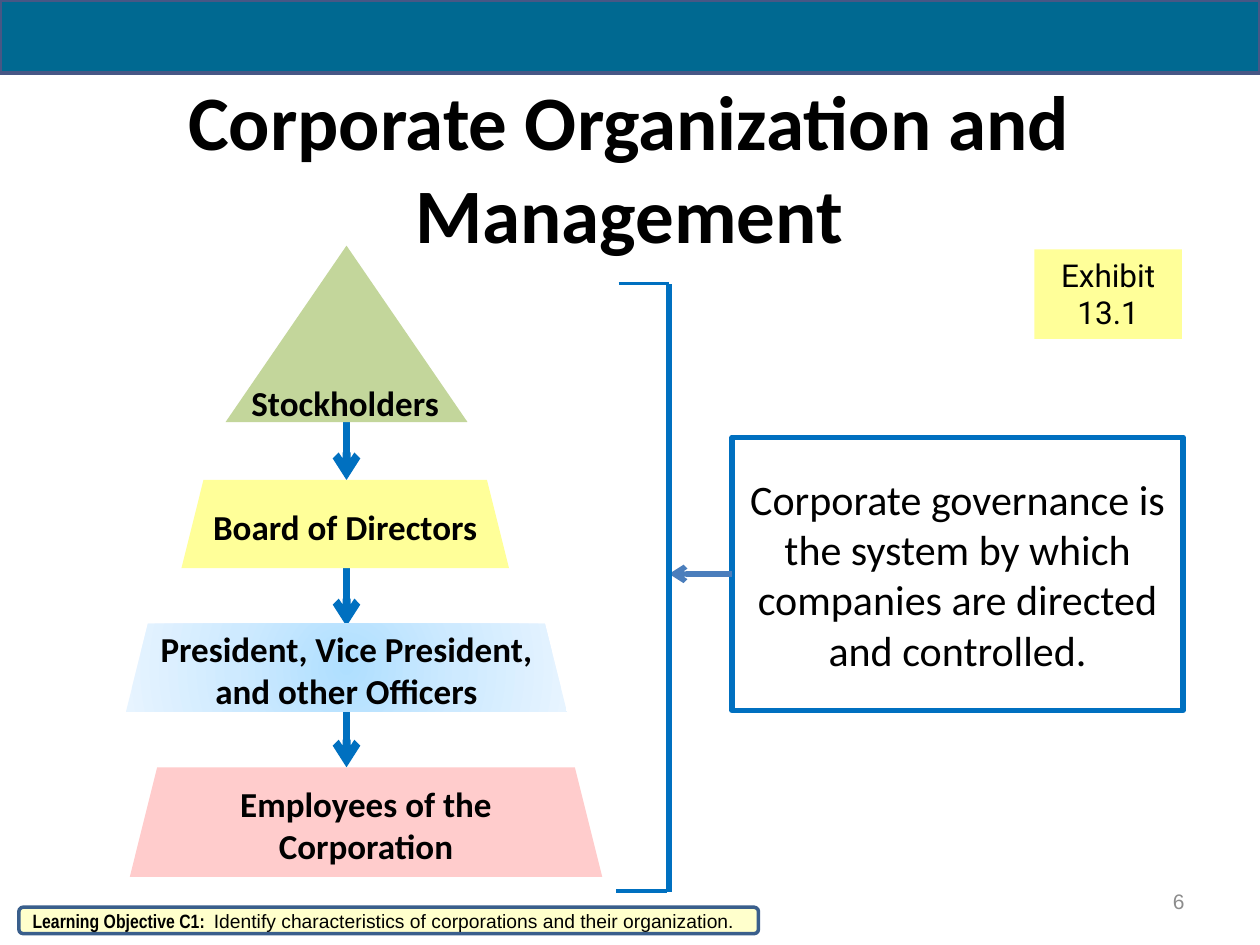
from lxml.etree import SubElement as Sub
from pptx import Presentation
from pptx.dml.color import RGBColor as Rgb
from pptx.enum.shapes import MSO_CONNECTOR as Conn, MSO_SHAPE as Geo
from pptx.enum.text import MSO_ANCHOR as Anchor, PP_ALIGN as Align
from pptx.oxml.ns import qn
from pptx.util import Inches, Pt

THEME = {
    "ink": "000000", "gray": "8C8C8C", "white": "FFFFFF",
    "blue": "0070C0", "link": "4B7EBC",
    "band": "006991", "edge": "475785", "rim": "3A5F8C",
    "green": "C3D69B", "lemon": "FFFF99", "cream": "FFFFCC", "pink": "FFCCCC",
    "glow": [(0, "AFDFFF"), (50, "CEEAFF"), (100, "E7F4FF")],
    "title": 44, "body": 24, "label": 20, "tag": 18, "page": 12, "note": 11,
}
BOLD = {"size": "label", "name": "Calibri", "bold": True}
TITLE = ("Corporate Organization and Management", (0.33, 0.61, 9.33, 1.42))
RULE = ("Corporate governance is the system by which companies are directed and controlled.",
        (5.81, 3.47, 3.58, 2.17))
TIERS = [
    ("", Geo.ISOSCELES_TRIANGLE, (1.79, 1.95, 1.92, 1.4), "green"),
    ("Board of Directors", Geo.TRAPEZOID, (1.44, 3.81, 2.6, 0.7), "lemon"),
    ("President, Vice President, and other Officers", Geo.TRAPEZOID, (1, 4.95, 3.5, 0.7), "glow"),
    ("Employees of the Corporation", Geo.TRAPEZOID, (1.03, 6.09, 3.75, 0.87), "pink"),
]
OWNER = ("Stockholders", (1.69, 3.03, 2.1, 0.33))
AXIS, DROP, TIPS = 2.75, 0.6, (3.81, 4.97, 6.09)
BRACE = [
    ((5.31, 7.08), (5.31, 2.25), 3),
    ((4.91, 2.25), (5.31, 2.25), 2.25),
    ((4.89, 7.07), (5.29, 7.07), 2.25),
]
GOAL = [
    ("Learning Objective C1:  ", {"size": "note", "name": "Arial Narrow", "bold": True}),
    ("Identify characteristics of corporations and their organization.",
     {"size": "note", "name": "Arial", "bold": False}),
]


def tint(key):
    return Rgb.from_string(THEME[key])


def glow(shape, stops):
    shape.fill.gradient()
    grad = shape.fill._xPr.find(qn("a:gradFill"))
    for kid in list(grad):
        grad.remove(kid)
    group = Sub(grad, qn("a:gsLst"))
    for pos, code in stops:
        stop = Sub(group, qn("a:gs"), pos=str(pos * 1000))
        Sub(stop, qn("a:srgbClr"), val=code)
    way = Sub(grad, qn("a:path"), path="circle")
    Sub(way, qn("a:fillToRect"), **dict.fromkeys("ltrb", "50000"))


def write(shape, runs, align=Align.CENTER, ink="ink", **frame):
    base = {"word_wrap": True, "vertical_anchor": Anchor.MIDDLE}
    for key, val in {**base, **frame}.items():
        setattr(shape.text_frame, key, val)
    para = shape.text_frame.paragraphs[0]
    para.alignment = align
    for text, form in runs:
        run = para.add_run()
        run.text = text
        run.font.color.rgb = tint(ink)
        for key, val in form.items():
            setattr(run.font, key, Pt(THEME[val]) if key == "size" else val)


def block(slide, geo, box, fill, line=None, width=0):
    shape = slide.shapes.add_shape(geo, *map(Inches, box))
    shape.shadow.inherit = False
    if fill == "glow":
        glow(shape, THEME[fill])
    else:
        shape.fill.solid()
        shape.fill.fore_color.rgb = tint(fill)
    if line:
        shape.line.color.rgb = tint(line)
        shape.line.width = Pt(width)
    else:
        shape.line.fill.background()
    return shape


def label(slide, box, runs, **form):
    write(slide.shapes.add_textbox(*map(Inches, box)), runs, **form)


def wire(slide, start, end, width, color="blue", arrow=False):
    line = slide.shapes.add_connector(Conn.STRAIGHT, *map(Inches, start + end))
    line.line.color.rgb = tint(color)
    line.line.width = Pt(width)
    props = line._element.spPr
    if arrow:
        Sub(props.find(qn("a:ln")), qn("a:tailEnd"), type="arrow")
    Sub(props, qn("a:effectLst"))
    return line


def main():
    """Build the corporate organization slide."""
    deck = Presentation()
    deck.slide_width, deck.slide_height = Inches(10), Inches(7.5)
    slide = deck.slides.add_slide(deck.slide_layouts[6])

    text, box = TITLE
    label(slide, box, [(text, {**BOLD, "size": "title"})])

    text, box = RULE
    rule = block(slide, Geo.RECTANGLE, box, "white", "blue", 3)
    write(rule, [(text, {"size": "body", "name": "Calibri"})])
    mid = box[1] + box[3] / 2
    link = wire(slide, (box[0], mid), (BRACE[0][0][0], mid), 3, "link", True)
    link.begin_connect(rule, 1)

    for tip in TIPS:
        wire(slide, (AXIS, tip - DROP), (AXIS, tip), 4.5, arrow=True)
    for text, geo, box, fill in TIERS:
        tier = block(slide, geo, box, fill)
        if text:
            write(tier, [(text, BOLD)])
    text, box = OWNER
    label(slide, box, [(text, BOLD)])

    for start, end, width in BRACE:
        wire(slide, start, end, width)

    block(slide, Geo.RECTANGLE, (0, 0, 10, 0.58), "band", "edge", 2.25)
    label(slide, (7.17, 6.95, 2.33, 0.4), [("6", {"size": "page", "name": "Arial"})],
          align=Align.RIGHT, ink="gray")
    goal = block(slide, Geo.ROUNDED_RECTANGLE, (0.15, 7.2, 5.87, 0.21), "cream", "rim", 2)
    write(goal, GOAL, align=Align.LEFT, margin_top=0, margin_bottom=0)
    tag = block(slide, Geo.RECTANGLE, (8.21, 1.98, 1.17, 0.71), "lemon")
    write(tag, [("Exhibit 13.1", {"size": "tag", "name": "Roboto"})],
          vertical_anchor=Anchor.TOP)

    deck.save("out.pptx")


if __name__ == "__main__":
    main()
